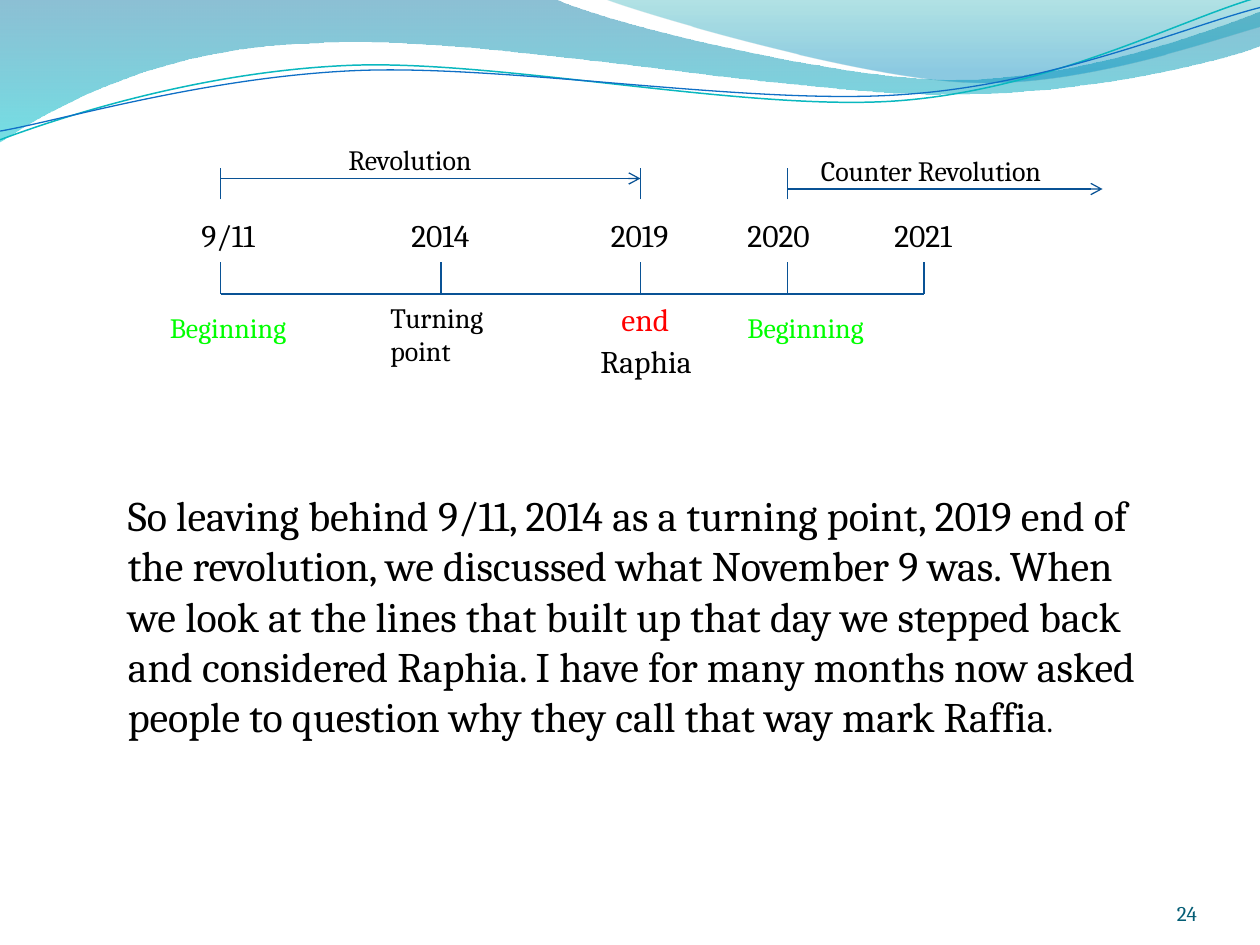
"""Build a slide with a timeline of two revolutions under a wave header."""
from dataclasses import dataclass

from lxml.etree import SubElement
from pptx import Presentation
from pptx.dml.color import RGBColor
from pptx.enum.shapes import MSO_CONNECTOR
from pptx.enum.text import MSO_ANCHOR, MSO_AUTO_SIZE, PP_ALIGN
from pptx.oxml.ns import qn
from pptx.slide import Slide
from pptx.util import Pt

FONT = "Cambria"
BLACK, RED, GREEN = "000000", "FF0000", "00FF00"
NAVY, TEAL = "095295", "045D75"
AXIS, TICK = 168, 18


@dataclass
class Stop:
    hue: str
    pos: float
    alpha: int


@dataclass
class Wave:
    start: tuple[float, float]
    curves: list[tuple[float, ...]]
    stops: tuple[Stop, ...] = ()
    hue: str = ""
    width: float = 0


@dataclass
class Label:
    text: str
    left: float
    top: float
    width: float
    height: float
    size: float = 18
    hue: str = BLACK


@dataclass
class Rule:
    x1: float
    y1: float
    x2: float
    y2: float
    arrow: bool = False


WAVES = [
    Wave((0, 0), [
        (316.8, -0.7),
        (342.7, 12.2, 478.1, 45.4, 545.8, 45.4),
        (614.2, 45.4, 689.8, 18.7, 720, 6.5),
        (720.7, 25.9),
        (707.8, 31.7, 626.4, 54.7, 537.1, 54),
        (447.8, 54, 275, 20.2, 185, 24.5),
        (92.9, 25.9, 33.1, 59.8, -0.7, 81.4),
    ], (Stop("0074A1", 0, 45), Stop("00C6CF", 1, 55))),
    Wave((344.9, -0.7), [
        (366.5, 7.9, 491, 44.6, 553.7, 46.8),
        (616.3, 49.7, 691.9, 23, 720, 15.1),
        (720, 0),
    ], (Stop("00A1A9", 0, 30), Stop("008BBF", 0.8, 45))),
    Wave((0, 79.9), [
        (34.6, 67, 113.8, 41, 199.4, 37.4),
        (284.4, 33.8, 427, 64.1, 513.4, 57.6),
        (599.8, 51.1, 675.4, 10.8, 718.6, -1.4),
    ], hue="0AB8BF", width=0.85),
    Wave((0, 74.9), [
        (33.8, 69.1, 118.1, 43.9, 203.8, 40.3),
        (290.2, 36.7, 429.8, 60.5, 516.2, 54),
        (601.9, 48.2, 677.5, 15.1, 720, 4.3),
    ], hue="0F6FC6", width=0.75),
]

YEARS = [126, 252, 366, 450, 528]
ENDS = [126, 366, 450]
RULES = [
    Rule(YEARS[0], AXIS, YEARS[-1], AXIS),
    *[Rule(x, AXIS, x, AXIS - TICK) for x in YEARS],
    *[Rule(x, 114, x, 114 - TICK) for x in ENDS],
    Rule(126, 102, 366, 102, True),
    Rule(450, 108, 630, 108, True),
]

LABELS = [
    Label("9/11", 108, 120, 54, 30),
    Label("2014", 228, 120, 66, 30),
    Label("2019", 342, 120, 66, 30),
    Label("2020", 420, 120, 84, 30),
    Label("2021", 504, 120, 66, 30),
    Label("Turning point", 216, 168, 90, 46, 16),
    Label("end", 348, 168, 60, 29, 18, RED),
    Label("Beginning", 90, 174, 102, 26.6, 16, GREEN),
    Label("Beginning", 420, 174, 120, 26.6, 16, GREEN),
    Label("Revolution", 192, 78, 114, 26.6, 16),
    Label("Counter Revolution", 462, 84, 168, 26.6, 16),
    Label("Raphia", 336, 192, 90, 30),
]
BODY = Label(
    "So leaving behind 9/11, 2014 as a turning point, 2019 end of the "
    "revolution, we discussed what November 9 was. When we look at the lines "
    "that built up that day we stepped back and considered Raphia. I have for "
    "many months now asked people to question why they call that way mark "
    "Raffia", 66, 276, 606, 181.4, 24)
PAGE = Label("24", 624, 500.4, 60, 28.8, 12, TEAL)


def color(code: str) -> RGBColor:
    return RGBColor.from_string(code)


def style(run, size: float, hue: str) -> None:
    run.font.name = FONT
    run.font.size = Pt(size)
    run.font.color.rgb = color(hue)


def bend(shape, curves: list[tuple[float, ...]]) -> None:
    nodes = iter(list(shape.element.iter(qn("a:lnTo"))))
    for curve in curves:
        group = [next(nodes) for _ in range(len(curve) // 2)]
        if len(group) < 3:
            continue
        trace = group[0].getparent()
        cubic = SubElement(trace, qn("a:cubicBezTo"))
        group[0].addprevious(cubic)
        for node in group:
            cubic.append(node[0])
            trace.remove(node)


def shade(shape, stops: tuple[Stop, ...]) -> None:
    shape.fill.gradient()
    shape.fill.gradient_angle = 270
    for mark, stop in zip(shape.fill.gradient_stops, stops):
        mark.color.rgb = color(stop.hue)
        mark.position = stop.pos
    for node, stop in zip(shape.element.iter(qn("a:srgbClr")), stops):
        SubElement(node, qn("a:alpha")).set("val", str(stop.alpha * 1000))


def draw_wave(slide: Slide, wave: Wave) -> None:
    pen = slide.shapes.build_freeform(*map(Pt, wave.start))
    spots = [(Pt(curve[i]), Pt(curve[i + 1]))
             for curve in wave.curves for i in range(0, len(curve), 2)]
    pen.add_line_segments(spots, close=bool(wave.stops))
    shape = pen.convert_to_shape()
    shape.shadow.inherit = False
    bend(shape, wave.curves)
    if wave.stops:
        shade(shape, wave.stops)
        shape.line.fill.background()
    else:
        shape.fill.background()
        shape.line.color.rgb = color(wave.hue)
        shape.line.width = Pt(wave.width)


def draw_rule(slide: Slide, rule: Rule) -> None:
    line = slide.shapes.add_connector(
        MSO_CONNECTOR.STRAIGHT, Pt(rule.x1), Pt(rule.y1), Pt(rule.x2), Pt(rule.y2))
    line.line.color.rgb = color(NAVY)
    line.line.width = Pt(0.75)
    props = line.element.spPr
    if rule.arrow:
        SubElement(props.find(qn("a:ln")), qn("a:tailEnd")).set("type", "arrow")
    SubElement(props, qn("a:effectLst"))


def draw_label(slide: Slide, label: Label):
    box = slide.shapes.add_textbox(
        Pt(label.left), Pt(label.top), Pt(label.width), Pt(label.height))
    frame = box.text_frame
    frame.word_wrap = True
    frame.auto_size = MSO_AUTO_SIZE.SHAPE_TO_FIT_TEXT
    frame.text = label.text
    style(frame.paragraphs[0].runs[0], label.size, label.hue)
    return frame


def main() -> None:
    deck = Presentation()
    deck.slide_width, deck.slide_height = Pt(720), Pt(540)
    slide = deck.slides.add_slide(deck.slide_layouts[6])
    for wave in WAVES:
        draw_wave(slide, wave)
    for rule in RULES:
        draw_rule(slide, rule)
    for label in LABELS:
        draw_label(slide, label)
    dot = draw_label(slide, BODY).paragraphs[0].add_run()
    dot.text = "."
    style(dot, 18, BLACK)
    page = draw_label(slide, PAGE)
    page.auto_size = MSO_AUTO_SIZE.NONE
    page.margin_left = page.margin_right = page.margin_top = page.margin_bottom = 0
    page.vertical_anchor = MSO_ANCHOR.BOTTOM
    page.paragraphs[0].alignment = PP_ALIGN.RIGHT
    deck.save("out.pptx")


if __name__ == "__main__":
    main()
